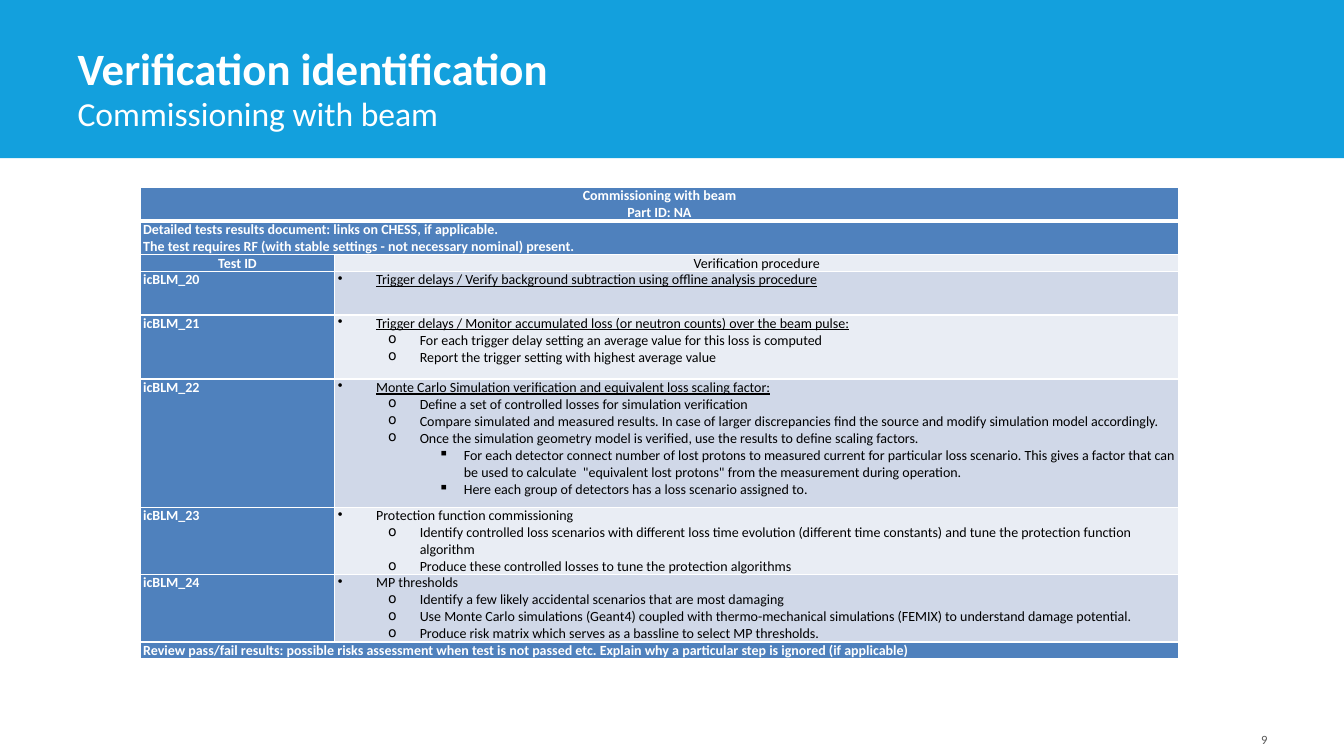
"""Build the slide on verification identification for commissioning with beam."""
from dataclasses import dataclass

from pptx import Presentation
from pptx.dml.color import RGBColor as Color
from pptx.enum.shapes import MSO_SHAPE as Preset
from pptx.enum.text import MSO_ANCHOR as Anchor, PP_ALIGN as Align
from pptx.oxml.ns import qn
from pptx.util import Inches, Pt
from lxml.etree import SubElement

WIDTH, HEIGHT = Inches(13.33), Inches(7.5)


@dataclass(frozen=True)
class Theme:
    font: str = "Calibri"
    banner: str = "13A0DD"
    heading: str = "4F81BD"
    bands: tuple[str, str] = ("E9EDF4", "D0D8E8")
    white: str = "FFFFFF"
    black: str = "000000"
    grey: str = "595959"
    title_size: int = 32
    subtitle_size: int = 24
    table_size: int = 10
    number_size: int = 9


@dataclass(frozen=True)
class Box:
    """Hold a rectangle in percent of the slide's width and height."""
    left: float
    top: float
    width: float
    height: float

    def place(self) -> tuple[int, int, int, int]:
        return across(self.left), down(self.top), across(self.width), down(self.height)


@dataclass(frozen=True)
class Bullet:
    symbol: str
    margin: float
    hanging: float


@dataclass(frozen=True)
class Step:
    text: str
    level: int = 1
    underline: bool = False


@dataclass(frozen=True)
class Verification:
    test_id: str
    lines: float
    steps: tuple[Step, ...]


THEME = Theme()
BANNER = Box(0, 0, 100, 20.93)
TITLE = Box(5.03, 5.07, 78.1, 8.13)
SUBTITLE = Box(5.03, 11.6, 78.1, 8.67)
NUMBER = Box(71.72, 94.13, 23.33, 5.33)
TABLE = Box(10.43, 24.8, 77.27, 61.1)
COLUMNS = (14.48, 62.79)
LINE = 2.12
THIN, THICK = 1, 3
BULLETS = (Bullet("•", 2.85, 2.85), Bullet("o", 6.1, 2.35), Bullet("▪", 9.38, 1.88))

HEADINGS = (
    ("Commissioning with beam", "Part ID: NA"),
    ("Detailed tests results document: links on CHESS, if applicable.",
     "The test requires RF (with stable settings - not necessary nominal) present."),
)
REVIEW = ("Review pass/fail results: possible risks assessment when test is not passed etc. "
          "Explain why a particular step is ignored (if applicable)")
VERIFICATIONS = (
    Verification("icBLM_20", 2.7, (
        Step("Trigger delays / Verify background subtraction using offline analysis procedure", 0, True),
    )),
    Verification("icBLM_21", 4, (
        Step("Trigger delays / Monitor accumulated loss (or neutron counts) over the beam pulse:", 0, True),
        Step("For each trigger delay setting an average value for this loss is computed"),
        Step("Report the trigger setting with highest average value"),
    )),
    Verification("icBLM_22", 8, (
        Step("Monte Carlo Simulation verification and equivalent loss scaling factor:", 0, True),
        Step("Define a set of controlled losses for simulation verification"),
        Step("Compare simulated and measured results. In case of larger discrepancies "
             "find the source and modify simulation model accordingly."),
        Step("Once the simulation geometry model is verified, use the results to define scaling factors."),
        Step("For each detector connect number of lost protons to measured current for particular "
             "loss scenario. This gives a factor that can be used to calculate  "
             '"equivalent lost protons" from the measurement during operation.', 2),
        Step("Here each group of detectors has a loss scenario assigned to.", 2),
    )),
    Verification("icBLM_23", 4, (
        Step("Protection function commissioning", 0),
        Step("Identify controlled loss scenarios with different loss time evolution "
             "(different time constants) and tune the protection function algorithm"),
        Step("Produce these controlled losses to tune the protection algorithms"),
    )),
    Verification("icBLM_24", 4, (
        Step("MP thresholds", 0),
        Step("Identify a few likely accidental scenarios that are most damaging"),
        Step("Use Monte Carlo simulations (Geant4) coupled with thermo-mechanical simulations "
             "(FEMIX) to understand damage potential."),
        Step("Produce risk matrix which serves as a bassline to select MP thresholds."),
    )),
)


def across(percent: float) -> int:
    return round(WIDTH * percent / 100)


def down(percent: float) -> int:
    return round(HEIGHT * percent / 100)


def write(frame, text: str, *, size: int = THEME.table_size, color: str = THEME.white,
          bold: bool = False, underline: bool = False, align=Align.LEFT,
          level: int | None = None) -> None:
    """Write one paragraph, with the bullet of its level if one is given."""
    first = frame.paragraphs[0]
    paragraph = frame.add_paragraph() if first.runs else first
    paragraph.alignment = align
    if level is not None:
        bullet = BULLETS[level]
        paragraph.level = level
        properties = paragraph._p.get_or_add_pPr()
        properties.set("marL", str(across(bullet.margin)))
        properties.set("indent", str(-across(bullet.hanging)))
        SubElement(properties, qn("a:buChar"), char=bullet.symbol)
    run = paragraph.add_run()
    run.text = text
    font = run.font
    font.name, font.size, font.bold, font.underline = THEME.font, Pt(size), bold, underline
    font.color.rgb = Color.from_string(color)


def add_text(slide, box: Box, text: str, *, anchor=Anchor.TOP, **text_format) -> None:
    frame = slide.shapes.add_textbox(*box.place()).text_frame
    frame.word_wrap = True
    frame.vertical_anchor = anchor
    write(frame, text, **text_format)


def add_banner(slide) -> None:
    shape = slide.shapes.add_shape(Preset.RECTANGLE, *BANNER.place())
    shape.shadow.inherit = False
    shape.fill.solid()
    shape.fill.fore_color.rgb = Color.from_string(THEME.banner)
    shape.line.fill.background()


def style_cell(cell, fill: str, *, top: int = THIN, bottom: int = THIN) -> None:
    """Set the margins, white borders and fill of one cell."""
    cell.margin_left = cell.margin_right = across(0.23)
    cell.margin_top = cell.margin_bottom = 0
    properties = cell._tc.get_or_add_tcPr()
    for side, width in (("L", THIN), ("R", THIN), ("T", top), ("B", bottom)):
        border = SubElement(properties, qn(f"a:ln{side}"), w=str(Pt(width)))
        SubElement(SubElement(border, qn("a:solidFill")), qn("a:srgbClr"), val=THEME.white)
    cell.fill.solid()
    cell.fill.fore_color.rgb = Color.from_string(fill)


def add_verification_table(slide) -> None:
    tests = [verification.lines for verification in VERIFICATIONS]
    row_lines = [2, 2, 1, *tests, 1]
    last = len(row_lines) - 1
    table = slide.shapes.add_table(len(row_lines), len(COLUMNS), *TABLE.place()).table
    table.first_row = table.horz_banding = False
    for column, width in zip(table.columns, COLUMNS):
        column.width = across(width)
    for index, (row, lines) in enumerate(zip(table.rows, row_lines)):
        row.height = down(LINE * lines)
        spanning = index in (0, 1, last)
        fills = (THEME.heading, THEME.heading if spanning else THEME.bands[index % 2])
        for cell, fill in zip(row.cells, fills):
            style_cell(cell, fill, top=THICK if index == 1 else THIN,
                       bottom=THICK if index == 0 else THIN)
        if spanning:
            table.cell(index, 0).merge(table.cell(index, 1))

    for index, (texts, align) in enumerate(zip(HEADINGS, (Align.CENTER, Align.LEFT))):
        for text in texts:
            write(table.cell(index, 0).text_frame, text, bold=True, align=align)
    write(table.cell(2, 0).text_frame, "Test ID", bold=True, align=Align.CENTER)
    write(table.cell(2, 1).text_frame, "Verification procedure", color=THEME.black, align=Align.CENTER)
    for index, verification in enumerate(VERIFICATIONS, start=3):
        write(table.cell(index, 0).text_frame, verification.test_id, bold=True)
        for step in verification.steps:
            write(table.cell(index, 1).text_frame, step.text, color=THEME.black,
                  underline=step.underline, level=step.level)
    write(table.cell(last, 0).text_frame, REVIEW, bold=True)


def main() -> None:
    presentation = Presentation()
    presentation.slide_width, presentation.slide_height = WIDTH, HEIGHT
    slide = presentation.slides.add_slide(presentation.slide_layouts[6])
    add_banner(slide)
    add_text(slide, TITLE, "Verification identification", anchor=Anchor.BOTTOM,
             size=THEME.title_size, bold=True)
    add_text(slide, NUMBER, "9", anchor=Anchor.BOTTOM, size=THEME.number_size,
             color=THEME.grey, align=Align.RIGHT)
    add_text(slide, SUBTITLE, "Commissioning with beam", size=THEME.subtitle_size)
    add_verification_table(slide)
    presentation.save("out.pptx")


if __name__ == "__main__":
    main()
